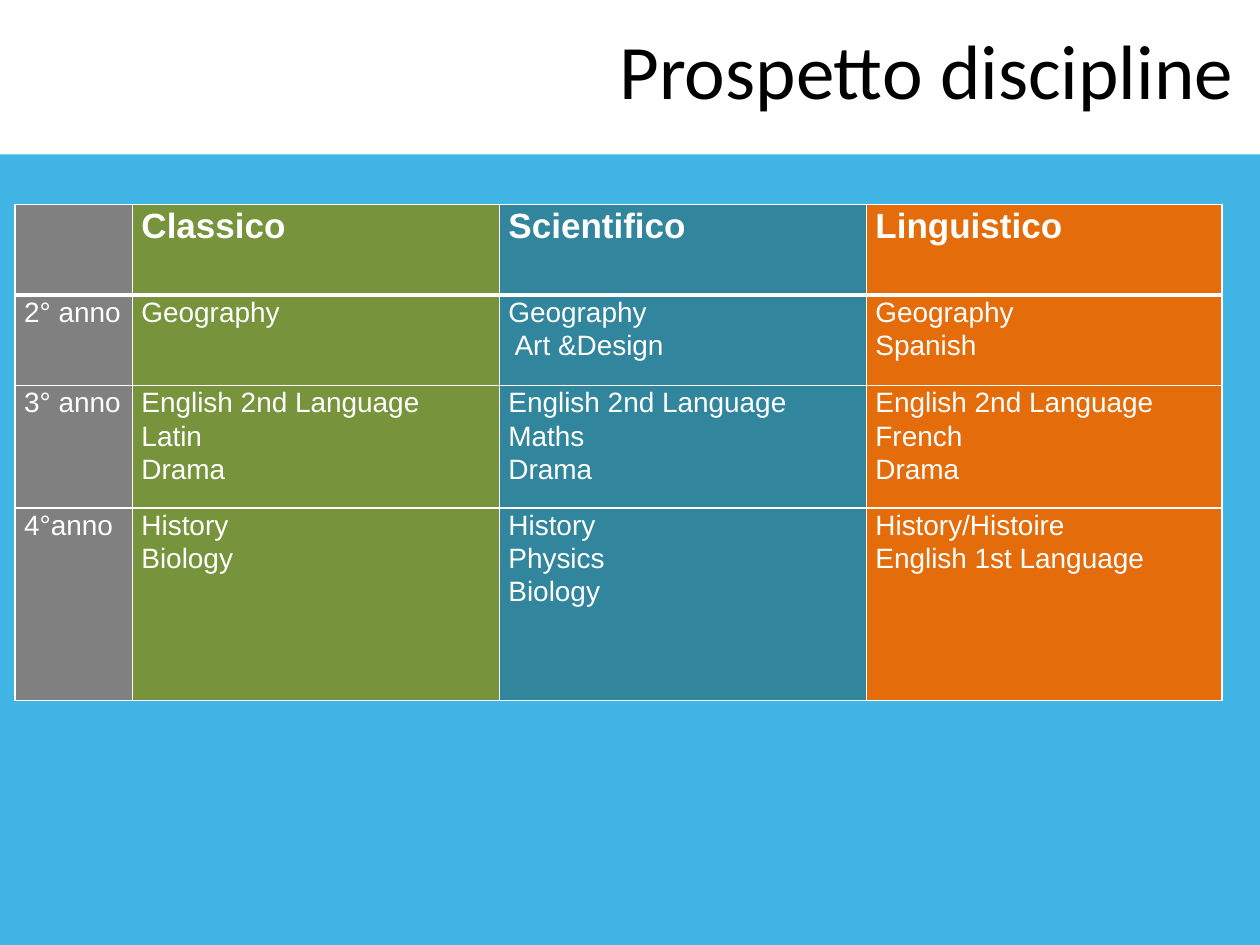
from pptx import Presentation
from pptx.dml.color import RGBColor as RGB
from pptx.enum.shapes import MSO_SHAPE as Shape
from pptx.enum.text import MSO_ANCHOR as Anchor, PP_ALIGN as Align
from pptx.oxml import parse_xml as to_xml
from pptx.oxml.ns import nsdecls
from pptx.util import Pt

WHITE = RGB(0xFF, 0xFF, 0xFF)
BLACK = RGB(0, 0, 0)
SKY = RGB(0x41, 0xB6, 0xE6)
GREY = RGB(0x80, 0x80, 0x80)
GREEN = RGB(0x77, 0x93, 0x3C)
TEAL = RGB(0x31, 0x85, 0x9C)
ORANGE = RGB(0xE4, 0x6C, 0x0A)

FILLS = [GREY, GREEN, TEAL, ORANGE]
COLS = [67, 209.5, 209.5, 203]
ROWS = [51.8, 51.8, 69.8, 110.2]
CELLS = [
    ["", "Classico", "Scientifico", "Linguistico"],
    ["2° anno", "Geography", "Geography\n Art &Design", "Geography\nSpanish"],
    ["3° anno", "English 2nd Language\nLatin\nDrama",
     "English 2nd Language\nMaths\nDrama",
     "English 2nd Language\nFrench\nDrama"],
    ["4°anno", "History\nBiology", "History\nPhysics\nBiology",
     "History/Histoire\nEnglish 1st Language"],
]


def write(frame, text, size, font="Arial", color=WHITE, bold=False,
          align=Align.LEFT, space=1.0):
    frame.word_wrap = True
    frame.text = text
    for para in frame.paragraphs:
        para.alignment = align
        para.line_spacing = space
        para.font.size = Pt(size)
        para.font.name = font
        para.font.bold = bold
        para.font.color.rgb = color


def add_band(slide, left, top, width, height):
    band = slide.shapes.add_shape(
        Shape.RECTANGLE, Pt(left), Pt(top), Pt(width), Pt(height))
    band.shadow.inherit = False
    band.fill.solid()
    band.fill.fore_color.rgb = SKY
    band.line.fill.background()


def add_title(slide, left, top, width, height):
    box = slide.shapes.add_textbox(Pt(left), Pt(top), Pt(width), Pt(height))
    box.text_frame.vertical_anchor = Anchor.MIDDLE
    write(box.text_frame, "Prospetto discipline", 44, font="Calibri",
          color=BLACK, align=Align.RIGHT)


def add_edges(cell, top, base):
    props = cell._tc.get_or_add_tcPr()
    edges = [("L", 1), ("R", 1), ("T", top), ("B", base)]
    for i, (side, width) in enumerate(edges):
        props.insert(i, to_xml(
            f'<a:ln{side} {nsdecls("a")} w="{Pt(width)}"><a:solidFill>'
            f'<a:srgbClr val="{WHITE}"/></a:solidFill></a:ln{side}>'))


def add_grid(slide, left, top, width, height):
    table = slide.shapes.add_table(
        len(ROWS), len(COLS), Pt(left), Pt(top), Pt(width), Pt(height)).table
    for col, share in zip(table.columns, COLS):
        col.width = Pt(width * share / sum(COLS))
    for row, share in zip(table.rows, ROWS):
        row.height = Pt(height * share / sum(ROWS))
    for r, texts in enumerate(CELLS):
        for c, text in enumerate(texts):
            cell = table.cell(r, c)
            cell.margin_left = cell.margin_right = Pt(5.2)
            cell.margin_top = cell.margin_bottom = Pt(0)
            cell.fill.solid()
            cell.fill.fore_color.rgb = FILLS[c]
            add_edges(cell, 3 if r == 1 else 1, 3 if r == 0 else 1)
            write(cell.text_frame, text, 20 if r == 0 else 16,
                  bold=r == 0, space=1.07)


def main():
    deck = Presentation()
    deck.slide_width, deck.slide_height = Pt(720), Pt(540)
    slide = deck.slides.add_slide(deck.slide_layouts[6])
    add_band(slide, 0, 88.2, 720, 451.8)
    add_title(slide, 13.7, 8.6, 698.4, 61.2)
    add_grid(slide, 8.6, 116.8, 689.7, 283.6)
    deck.save("out.pptx")


if __name__ == "__main__":
    main()
